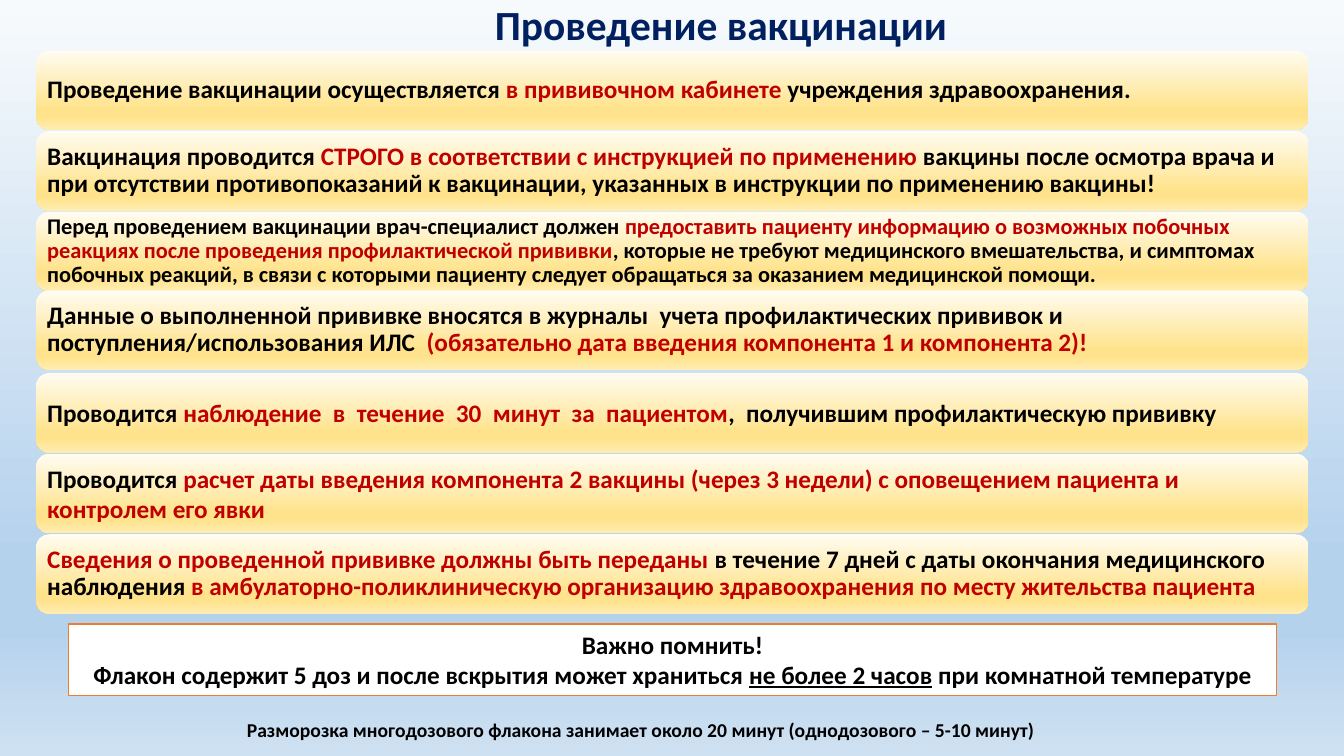
import pptx
import pptx.util
import pptx.oxml
import pptx.oxml.ns
import pptx.dml.color
import pptx.enum.shapes
import pptx.enum.text
import lxml.etree

Inches = pptx.util.Inches
ALIGN = pptx.enum.text.PP_ALIGN
ANCHOR = pptx.enum.text.MSO_ANCHOR
SHAPE = pptx.enum.shapes.MSO_SHAPE
COLORS = {"black": "000000", "red": "C00000", "navy": "002060",
          "white": "FFFFFF", "orange": "ED7D31"}
SKY = ["F7FAFD", "B5D2EC", "B5D2EC", "CEE1F2"]
GOLD = ["FFFCF2", "FFE38C", "FFE38C", "FFECB2"]


def shade(fill, tones):
    """Vertical gradient with four stops."""
    fill.gradient()
    fill.gradient_angle = 270
    qn = pptx.oxml.ns.qn
    stops = fill._fill._gradFill.find(qn("a:gsLst"))
    for stop in list(stops):
        stops.remove(stop)
    for spot, tone in zip((0, 74, 83, 100), tones):
        stop = lxml.etree.SubElement(stops, qn("a:gs"), pos=str(spot * 1000))
        lxml.etree.SubElement(stop, qn("a:srgbClr"), val=tone)


def write(par, runs, size, align=ALIGN.LEFT):
    """Fill a paragraph with bold (text, color) runs."""
    par.alignment = align
    for text, color in runs:
        run = par.add_run()
        run.text = text
        run.font.name = "Calibri"
        run.font.size = pptx.util.Pt(size)
        run.font.bold = True
        run.font.color.rgb = pptx.dml.color.RGBColor.from_string(COLORS[color])


deck = pptx.Presentation()
deck.slide_width = Inches(13.33)
deck.slide_height = Inches(7.5)
slide = deck.slides.add_slide(deck.slide_layouts[6])
shade(slide.background.fill, SKY)

# Steps: top, text size, line spacing, runs
steps = [
    (0.5, 18, 0.9, [
        ("Проведение вакцинации осуществляется ", "black"),
        ("в прививочном кабинете ", "red"),
        ("учреждения здравоохранения.", "black")]),
    (1.3, 18, 0.9, [
        ("Вакцинация проводится ", "black"),
        ("СТРОГО в соответствии с инструкцией по применению ", "red"),
        ("вакцины после осмотра врача и при отсутствии противопоказаний "
         "к вакцинации, указанных в инструкции по применению вакцины!", "black")]),
    (2.1, 16, 0.9, [
        ("Перед проведением вакцинации врач-специалист должен ", "black"),
        ("предоставить пациенту информацию о возможных побочных реакциях "
         "после проведения профилактической прививки", "red"),
        (", которые не требуют медицинского вмешательства, и симптомах "
         "побочных реакций, в связи с которыми пациенту следует обращаться "
         "за оказанием медицинской помощи.", "black")]),
    (2.88, 18, 0.9, [
        ("Данные о выполненной прививке вносятся в журналы  учета "
         "профилактических прививок и поступления/использования ИЛС  ", "black"),
        ("(обязательно дата введения компонента 1 и компонента 2)!", "red")]),
    (3.7, 18, 1.0, [
        ("Проводится ", "black"),
        ("наблюдение  в  течение  30  минут  за  пациентом", "red"),
        (",  получившим профилактическую прививку", "black")]),
    (4.5, 18, 1.0, [
        ("Проводится ", "black"),
        ("расчет даты введения компонента 2 вакцины (через 3 недели) "
         "с оповещением пациента и контролем его явки", "red")]),
    (5.3, 18, 0.9, [
        ("Сведения о проведенной прививке должны быть переданы", "red"),
        (" в течение 7 дней с даты окончания медицинского наблюдения ", "black"),
        ("в амбулаторно-поликлиническую организацию здравоохранения "
         "по месту жительства пациента", "red")]),
]
for top, size, gap, runs in steps:
    bar = slide.shapes.add_shape(SHAPE.ROUNDED_RECTANGLE, Inches(0.36),
                                 Inches(top), Inches(12.62), Inches(0.79))
    bar.shadow.inherit = False
    shade(bar.fill, GOLD)
    bar.line.fill.background()
    frame = bar.text_frame
    frame.word_wrap = True
    frame.vertical_anchor = ANCHOR.MIDDLE
    frame.margin_left = frame.margin_right = Inches(0.07)
    frame.margin_top = frame.margin_bottom = Inches(0.07)
    frame.paragraphs[0].line_spacing = gap
    write(frame.paragraphs[0], runs, size)

# Title
title = slide.shapes.add_textbox(Inches(2.64), Inches(-0.02),
                                 Inches(9.03), Inches(0.52)).text_frame
title.word_wrap = True
title.vertical_anchor = ANCHOR.MIDDLE
write(title.paragraphs[0], [("Проведение вакцинации", "navy")], 29.6, ALIGN.CENTER)

# Reminder box
box = slide.shapes.add_shape(SHAPE.RECTANGLE, Inches(0.68), Inches(6.19),
                             Inches(11.98), Inches(0.71))
box.shadow.inherit = False
box.fill.solid()
box.fill.fore_color.rgb = pptx.dml.color.RGBColor.from_string(COLORS["white"])
box.line.color.rgb = pptx.dml.color.RGBColor.from_string(COLORS["orange"])
box.line.width = pptx.util.Pt(1)
frame = box.text_frame
frame.word_wrap = True
frame.vertical_anchor = ANCHOR.TOP
write(frame.paragraphs[0], [("Важно помнить!", "black")], 18, ALIGN.CENTER)
rule = frame.add_paragraph()
write(rule, [("Флакон содержит 5 доз и после вскрытия может храниться ", "black"),
             ("не более 2 часов", "black"),
             (" при комнатной температуре", "black")], 18, ALIGN.CENTER)
rule.runs[1].font.underline = True

# Footnote
note = slide.shapes.add_textbox(Inches(2.35), Inches(7.07),
                                Inches(9.6), Inches(0.34)).text_frame
note.word_wrap = True
write(note.paragraphs[0], [("Разморозка многодозового флакона занимает около "
                            "20 минут (однодозового – 5-10 минут)", "black")], 14)

deck.save("out.pptx")
